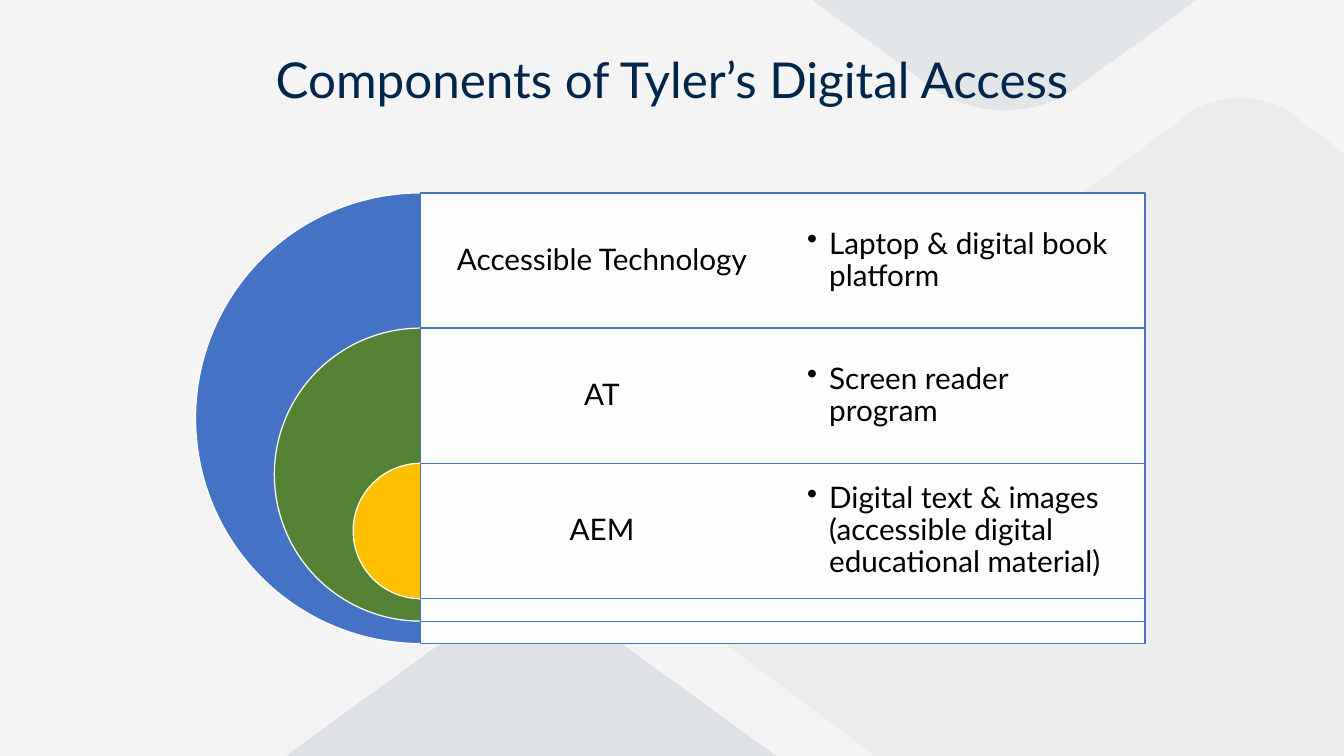
"""Build the slide on the three nested components of Tyler's digital access."""
from dataclasses import dataclass

from lxml.etree import SubElement
from pptx import Presentation
from pptx.dml.color import RGBColor as RGB
from pptx.enum.shapes import MSO_SHAPE as Kind
from pptx.enum.text import MSO_ANCHOR as Anchor, MSO_AUTO_SIZE as Fit, PP_ALIGN as Align
from pptx.oxml.ns import qn
from pptx.util import Cm, Pt


@dataclass(frozen=True)
class Theme:
    font: str = "Lato"
    head: int = 40
    body: int = 24
    navy: str = "01264B"
    ink: str = "000000"
    white: str = "FFFFFF"
    edge: str = "4472C4"
    veil: str = "F4F4F4"
    rings: tuple = ("4472C4", "548235", "FFC000")
    tiles: tuple = ("3C6082", "A6A6A6", "01305D")


def paint(shape, fill, line=None, alpha=100):
    shape.shadow.inherit = False
    shape.fill.solid()
    shape.fill.fore_color.rgb = RGB.from_string(fill)
    if alpha < 100:
        color = shape.fill._xPr.find(qn("a:solidFill"))[0]
        SubElement(color, qn("a:alpha"), val=str(alpha * 1000))
    if line:
        shape.line.color.rgb = RGB.from_string(line)
        shape.line.width = Pt(1)
    else:
        shape.line.fill.background()


def write(box, text, size, color, align, anchor):
    frame = box.text_frame
    frame.text = text
    frame.word_wrap = True
    frame.auto_size = Fit.NONE
    frame.vertical_anchor = anchor
    para = frame.paragraphs[0]
    para.alignment = align
    para.line_spacing = 0.9
    font = para.runs[0].font
    font.name, font.size = theme.font, Pt(size)
    font.color.rgb = RGB.from_string(color)
    return para


theme = Theme()
deck = Presentation()
deck.slide_width, deck.slide_height = Cm(38.38), Cm(21.59)
slide = deck.slides.add_slide(deck.slide_layouts[5])
shapes = slide.shapes

tiles = [
    [[(23.2, 0)], [(26.67, 2.54), (27.8, 3.35), (29.6, 3.35), (30.68, 2.54)], [(34.18, 0)]],
    [[(33.96, 3.23), (34.74, 2.65), (36.08, 2.65), (36.86, 3.23)], [(38.38, 4.37)],
     [(38.38, 21.59)], [(25, 21.59)], [(18.64, 16.84), (17.56, 16.04), (17.56, 15.48), (18.64, 14.68)]],
    [[(8.16, 21.59)], [(13.16, 17.96), (14, 17.2), (16.32, 17.2), (17.17, 17.96)], [(22.17, 21.59)]],
]
steps = [n / 16 for n in range(17)]
for color, parts in zip(theme.tiles, tiles):
    dots = []
    for part in parts:
        if len(part) == 1:
            dots += part
            continue
        for t in steps:
            mix = ((1 - t) ** 3, 3 * t * (1 - t) ** 2, 3 * t ** 2 * (1 - t), t ** 3)
            dots.append(tuple(sum(m * p[axis] for m, p in zip(mix, part)) for axis in (0, 1)))
    dots = [(Cm(x), Cm(y)) for x, y in dots]
    path = shapes.build_freeform(*dots[0])
    path.add_line_segments(dots[1:], close=True)
    paint(path.convert_to_shape(), color)

veil = shapes.add_shape(Kind.RECTANGLE, 0, 0, deck.slide_width, deck.slide_height)
paint(veil, theme.veil, alpha=91)

title = shapes.title
title.left, title.top, title.width, title.height = 0, Cm(-1.02), deck.slide_width, Cm(4.27)
write(title, "Components of Tyler’s Digital Access", theme.head, theme.navy, Align.CENTER, Anchor.BOTTOM)
veil._element.addnext(title._element)

rows = [
    ("Accessible Technology", "Laptop & digital book platform"),
    ("AT", "Screen reader program"),
    ("AEM", "Digital text & images (accessible digital educational material)"),
]
mid, top, step, col = 12.02, 5.51, 3.86, 10.34
for i, (name, note) in enumerate(rows):
    y, size = top + i * step, 12.87 - i * 4.5
    ring = shapes.add_shape(Kind.PIE, Cm(mid - size / 2), Cm(y), Cm(size), Cm(size))
    ring.adjustments[0], ring.adjustments[1] = 54, 162
    paint(ring, theme.rings[i], theme.white)
    panel = shapes.add_shape(Kind.RECTANGLE, Cm(mid), Cm(y), Cm(2 * col), Cm(size))
    paint(panel, theme.white, theme.edge, 90)
    for j, (text, align, inset) in enumerate([(name, Align.CENTER, 0.25), (note, Align.LEFT, 0.69)]):
        box = shapes.add_textbox(Cm(mid + j * col), Cm(y), Cm(col), Cm(step))
        para = write(box, text, theme.body, theme.ink, align, Anchor.MIDDLE)
        frame = box.text_frame
        frame.margin_left = frame.margin_right = frame.margin_top = frame.margin_bottom = Cm(inset)
        if j:
            para.level = 1
            props = para._p.get_or_add_pPr()
            props.set("marL", str(Cm(0.63)))
            props.set("indent", str(Cm(-0.63)))
            SubElement(props, qn("a:buChar"), char="•")

deck.save("out.pptx")
